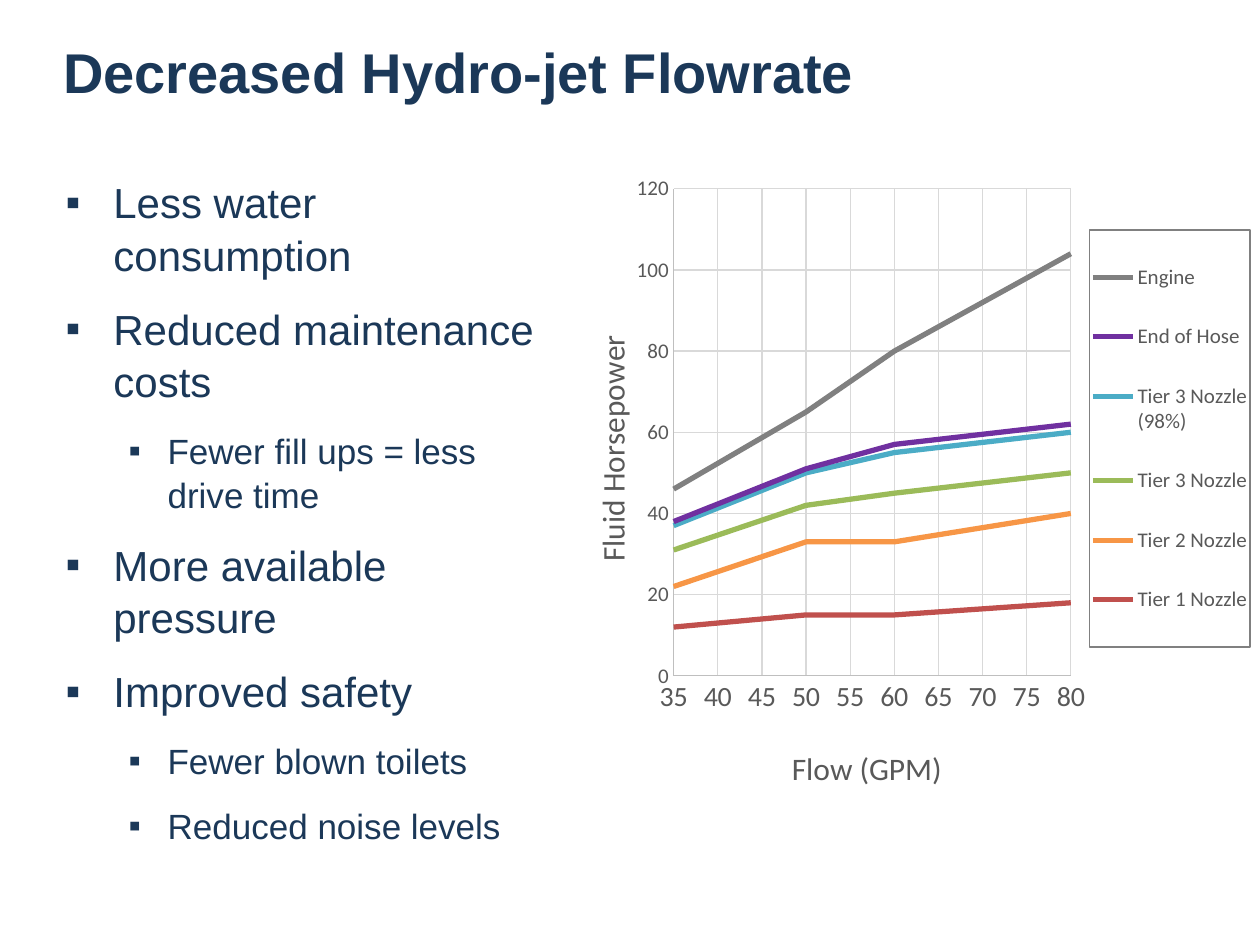
from dataclasses import dataclass

from lxml.etree import SubElement
from pptx import Presentation
from pptx.chart.data import XyChartData
from pptx.dml.color import RGBColor as RGB
from pptx.enum.chart import XL_CHART_TYPE as CT, XL_LEGEND_POSITION as LP, XL_TICK_MARK as TM
from pptx.enum.text import MSO_ANCHOR as MA, MSO_AUTO_SIZE as AS, PP_ALIGN as PA
from pptx.oxml import parse_xml
from pptx.oxml.ns import nsdecls, qn
from pptx.util import Inches as In, Pt


@dataclass(frozen=True)
class Theme:
    """Colours, fonts and type sizes of the slide."""
    navy: str = "1B3858"
    label: str = "595959"
    axis: str = "BFBFBF"
    grid: str = "D9D9D9"
    border: str = "808080"
    text_font: str = "Arial"
    chart_font: str = "Calibri"
    title: int = 32
    levels: tuple = (24, 20)
    axis_title: int = 18
    x_ticks: int = 16
    small: int = 12
    hairline: float = 0.75
    curve: int = 3


T = Theme()
W, H = 10, 7.5
SPLIT, TOP, BODY_H = 4.42, 1.33, 5
INDENTS = ((0.38, -0.38), (0.81, -0.31))
BULLETS = (
    (0, "Less water consumption"),
    (0, "Reduced maintenance costs"),
    (1, "Fewer fill ups = less drive time"),
    (0, "More available pressure"),
    (0, "Improved safety"),
    (1, "Fewer blown toilets"),
    (1, "Reduced noise levels"),
)
FLOWS = (80, 60, 50, 35)
SERIES = (
    ("Engine", "808080", (104, 80, 65, 46)),
    ("End of Hose", "7030A0", (62, 57, 51, 38)),
    ("Tier 3 Nozzle (98%)", "4BACC6", (60, 55, 50, 37)),
    ("Tier 3 Nozzle", "9BBB59", (50, 45, 42, 31)),
    ("Tier 2 Nozzle", "F79646", (40, 33, 33, 22)),
    ("Tier 1 Nozzle", "C0504D", (18, 15, 15, 12)),
)


def assign(obj, **values):
    """Set several attributes on one object."""
    for name, value in values.items():
        setattr(obj, name, value)


def style(font, name, size, color, bold=False):
    """Format a font."""
    assign(font, name=name, size=Pt(size), bold=bold)
    font.color.rgb = RGB.from_string(color)


def stroke(line, color, width=T.hairline):
    """Format a line."""
    line.color.rgb = RGB.from_string(color)
    line.width = Pt(width)


def place(sp, box):
    """Move a shape to a box given in inches."""
    assign(sp, **dict(zip(("left", "top", "width", "height"), map(In, box))))


def lay_out(el, index, **shares):
    """Give a chart part a manual layout in shares of the chart."""
    for old in el.findall(qn("c:layout")):
        el.remove(old)
    layout = parse_xml(f"<c:layout {nsdecls('c')}/>")
    manual = SubElement(layout, qn("c:manualLayout"))
    if el.tag == qn("c:plotArea"):
        SubElement(manual, qn("c:layoutTarget")).set("val", "inner")
    for key in ("x", "y"):
        SubElement(manual, qn(f"c:{key}Mode")).set("val", "edge")
    for key, value in shares.items():
        SubElement(manual, qn(f"c:{key}")).set("val", str(value))
    el.insert(index, layout)


def add_title(sp, box, text):
    """Fill the title placeholder."""
    place(sp, box)
    tf = sp.text_frame
    assign(tf, word_wrap=True, auto_size=AS.NONE, vertical_anchor=MA.TOP,
           margin_left=In(0.5), margin_right=In(0.5), margin_top=In(0.3), margin_bottom=In(0.05))
    p = tf.paragraphs[0]
    p.alignment = PA.LEFT
    r = p.add_run()
    r.text = text
    style(r.font, T.text_font, T.title, T.navy, True)


def add_bullets(sp, box, items):
    """Fill the body placeholder with a two-level list."""
    place(sp, box)
    tf = sp.text_frame
    assign(tf, word_wrap=True, auto_size=AS.NONE, vertical_anchor=MA.TOP)
    for i, (level, text) in enumerate(items):
        p = tf.add_paragraph() if i else tf.paragraphs[0]
        pPr = p._p.get_or_add_pPr()
        for key, value in zip(("marL", "indent"), INDENTS[level]):
            pPr.set(key, str(In(value)))
        SubElement(pPr, qn("a:buFont")).set("typeface", T.text_font)
        SubElement(pPr, qn("a:buChar")).set("char", "▪")
        assign(p, level=level, line_spacing=1.05, space_before=Pt(12 if i else 0))
        r = p.add_run()
        r.text = text
        style(r.font, T.text_font, T.levels[level], T.navy)


def format_axis(axis, title, spot, size, low, high, step):
    """Format one value axis with its title and grid."""
    assign(axis, minimum_scale=low, maximum_scale=high, major_unit=step,
           has_major_gridlines=True, major_tick_mark=TM.NONE, minor_tick_mark=TM.NONE)
    stroke(axis.major_gridlines.format.line, T.grid)
    stroke(axis.format.line, T.axis)
    style(axis.tick_labels.font, T.chart_font, size, T.label)
    p = axis.axis_title.text_frame.paragraphs[0]
    r = p.add_run()
    r.text = title
    style(r.font, T.chart_font, T.axis_title, T.label)
    lay_out(axis.axis_title._element, 1, **spot)


def format_legend(legend):
    """Place the framed legend to the right of the plot."""
    assign(legend, position=LP.RIGHT, include_in_layout=False)
    lay_out(legend._element, 1, x=0.758, y=0.1, w=0.228, h=0.667)
    legend._element.append(parse_xml(
        f'<c:spPr {nsdecls("c", "a")}><a:ln w="{Pt(T.hairline)}"><a:solidFill>'
        f'<a:srgbClr val="{T.border}"/></a:solidFill></a:ln></c:spPr>'))
    style(legend.font, T.chart_font, T.small, T.label)


def add_curves(slide, box):
    """Draw horsepower against flow for each point of the line."""
    data = XyChartData()
    for name, _, powers in SERIES:
        series = data.add_series(name)
        for flow, power in zip(FLOWS, powers):
            series.add_data_point(flow, power)
    chart = slide.shapes.add_chart(CT.XY_SCATTER_LINES_NO_MARKERS, *map(In, box), data).chart
    assign(chart, has_title=False, has_legend=True)
    style(chart.font, T.chart_font, 10, "000000")
    plot = chart.plots[0]
    plot.vary_by_categories = False
    for series, (_, color, _) in zip(plot.series, SERIES):
        series.smooth = True
        stroke(series.format.line, color, T.curve)
    format_axis(chart.category_axis, "Flow (GPM)", dict(x=0.326, y=0.917), T.x_ticks, 35, 80, 5)
    format_axis(chart.value_axis, "Fluid Horsepower", dict(x=0.04, y=0.262), T.small, 0, 120, 20)
    format_legend(chart.legend)
    lay_out(chart._chartSpace.chart.plotArea, 0, x=0.166, y=0.034, w=0.565, h=0.779)


def main():
    """Build and save the slide."""
    prs = Presentation()
    assign(prs, slide_width=In(W), slide_height=In(H))
    s = prs.slides.add_slide(prs.slide_layouts[1])
    add_title(s.shapes.title, (0, 0, W, 1.17), "Decreased Hydro-jet Flowrate")
    add_bullets(s.placeholders[1], (0.42, TOP, 3.92, BODY_H), BULLETS)
    add_curves(s, (SPLIT, TOP, W - SPLIT, BODY_H))
    prs.save("out.pptx")


if __name__ == "__main__":
    main()
